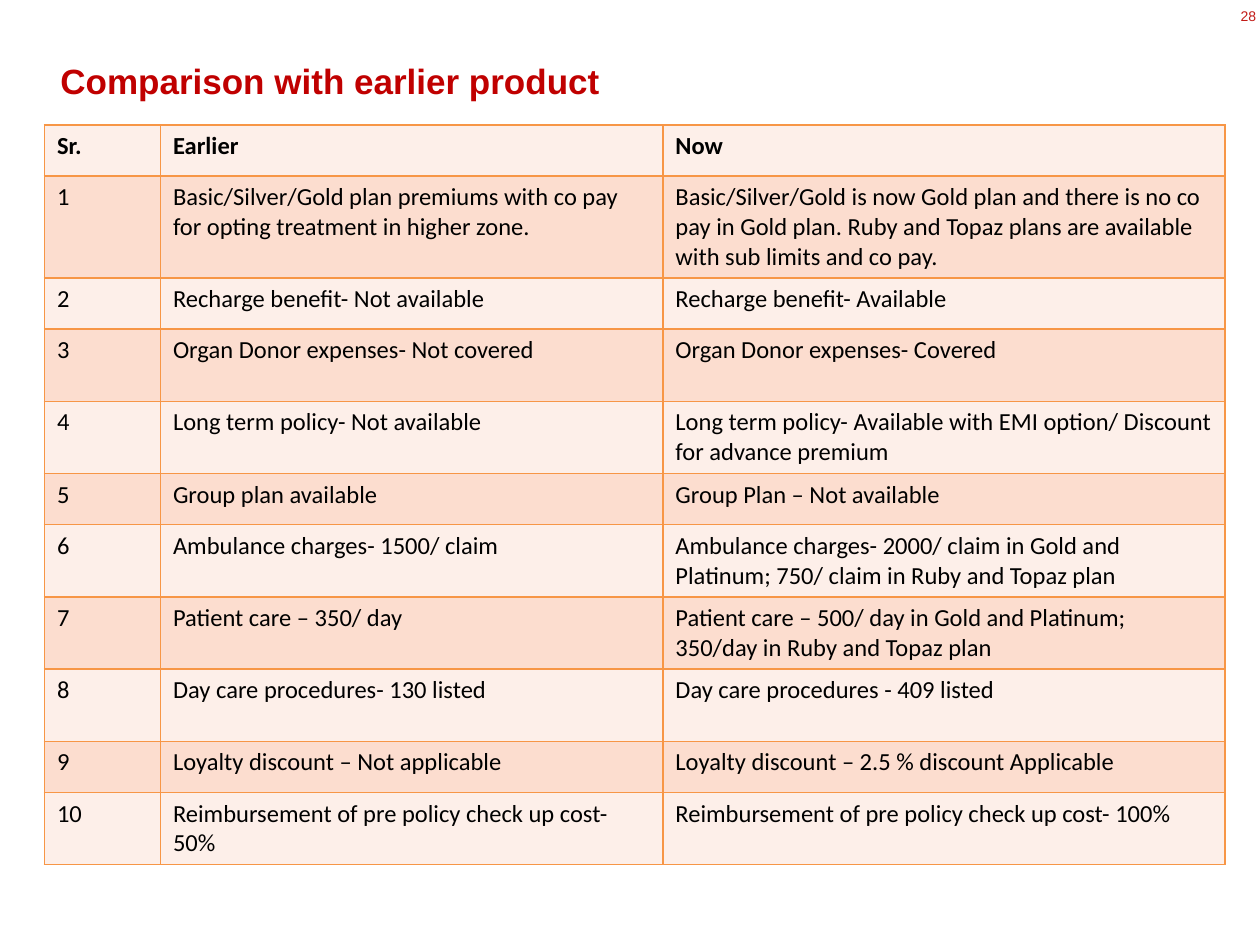
import dataclasses
import lxml.etree
import pptx
import pptx.dml.color
import pptx.enum.text
import pptx.oxml.ns
import pptx.util

Pt = pptx.util.Pt
ALIGN = pptx.enum.text.PP_ALIGN
ANCHOR = pptx.enum.text.MSO_ANCHOR


@dataclasses.dataclass(frozen=True)
class Theme:
    title: str = "C00000"
    number: str = "C21B17"
    text: str = "000000"
    border: str = "F79646"
    bands: tuple = ("FDEFE9", "FCDDCF")
    heading_font: str = "Arial"
    body_font: str = "Calibri"
    title_size: int = 20
    body_size: int = 14
    number_size: int = 8


THEME = Theme()
COLUMN_WIDTHS = (66.3, 287.1, 321.3)
ROW_HEIGHTS = {1: 29.2, 2: 41.3, 3: 58.3}
HEADER = ("Sr.", "Earlier", "Now")
COMPARISON = (
    (3, "Basic/Silver/Gold plan premiums with co pay for opting treatment in higher zone.",
     "Basic/Silver/Gold is now Gold plan and there is no co pay in Gold plan. "
     "Ruby and Topaz plans are available with sub limits and co pay."),
    (1, "Recharge benefit- Not available", "Recharge benefit- Available"),
    (2, "Organ Donor expenses- Not covered", "Organ Donor expenses- Covered"),
    (2, "Long term policy- Not available",
     "Long term policy- Available with EMI option/ Discount for advance premium"),
    (1, "Group plan available", "Group Plan – Not available"),
    (2, "Ambulance charges- 1500/ claim",
     "Ambulance charges- 2000/ claim in Gold and Platinum; 750/ claim in Ruby and Topaz plan"),
    (2, "Patient care – 350/ day",
     "Patient care – 500/ day in Gold and Platinum; 350/day in Ruby and Topaz plan"),
    (2, "Day care procedures- 130 listed", "Day care procedures - 409 listed"),
    (1, "Loyalty discount – Not applicable", "Loyalty discount – 2.5 % discount Applicable"),
    (2, "Reimbursement of pre policy check up cost- 50%",
     "Reimbursement of pre policy check up cost- 100%"),
)


def rgb(value):
    return pptx.dml.color.RGBColor.from_string(value)


def set_font(p, name, size, color, bold=False):
    p.font.name = name
    p.font.size = Pt(size)
    p.font.bold = bold
    p.font.color.rgb = rgb(color)


def add_text(s, text, left, top, width, height):
    tf = s.shapes.add_textbox(Pt(left), Pt(top), Pt(width), Pt(height)).text_frame
    tf.word_wrap = True
    p = tf.paragraphs[0]
    p.text = text
    return tf, p


def add_page_number(s):
    tf, p = add_text(s, "28", 702, 4.3, 15.8, 13.7)
    tf.margin_left = tf.margin_right = tf.margin_top = tf.margin_bottom = 0
    p.alignment = ALIGN.RIGHT
    set_font(p, THEME.heading_font, THEME.number_size, THEME.number)


def add_title(s):
    tf, p = add_text(s, "Comparison with earlier product", 27.4, 34.6, 660.2, 25.2)
    tf.vertical_anchor = ANCHOR.MIDDLE
    p.line_spacing = Pt(22)
    set_font(p, THEME.heading_font, THEME.title_size, THEME.title, True)


def set_borders(cell):
    tc_pr = cell._tc.get_or_add_tcPr()
    qn = pptx.oxml.ns.qn
    for position, side in enumerate(("lnL", "lnR", "lnT", "lnB")):
        line = lxml.etree.Element(qn(f"a:{side}"), w=str(Pt(1)))
        fill = lxml.etree.SubElement(line, qn("a:solidFill"))
        lxml.etree.SubElement(fill, qn("a:srgbClr"), val=THEME.border)
        tc_pr.insert(position, line)


def fill_cell(cell, text, color, bold):
    cell.fill.solid()
    cell.fill.fore_color.rgb = rgb(color)
    set_borders(cell)
    p = cell.text_frame.paragraphs[0]
    p.text = text
    set_font(p, THEME.body_font, THEME.body_size, THEME.text, bold)


def add_comparison_table(s):
    rows = [(1, HEADER)]
    rows += [(lines, (str(number), earlier, now))
             for number, (lines, earlier, now) in enumerate(COMPARISON, 1)]
    heights = [ROW_HEIGHTS[lines] for lines, _ in rows]
    table = s.shapes.add_table(len(rows), len(HEADER), Pt(25.4), Pt(71.4),
                               Pt(sum(COLUMN_WIDTHS)), Pt(sum(heights))).table
    for column, width in zip(table.columns, COLUMN_WIDTHS):
        column.width = Pt(width)
    for i, (_, texts) in enumerate(rows):
        table.rows[i].height = Pt(heights[i])
        for j, text in enumerate(texts):
            fill_cell(table.cell(i, j), text, THEME.bands[i % 2], i == 0)


def main():
    prs = pptx.Presentation()
    prs.slide_width, prs.slide_height = Pt(720), Pt(540)
    s = prs.slides.add_slide(prs.slide_layouts[6])
    add_page_number(s)
    add_title(s)
    add_comparison_table(s)
    prs.save("out.pptx")


if __name__ == "__main__":
    main()
